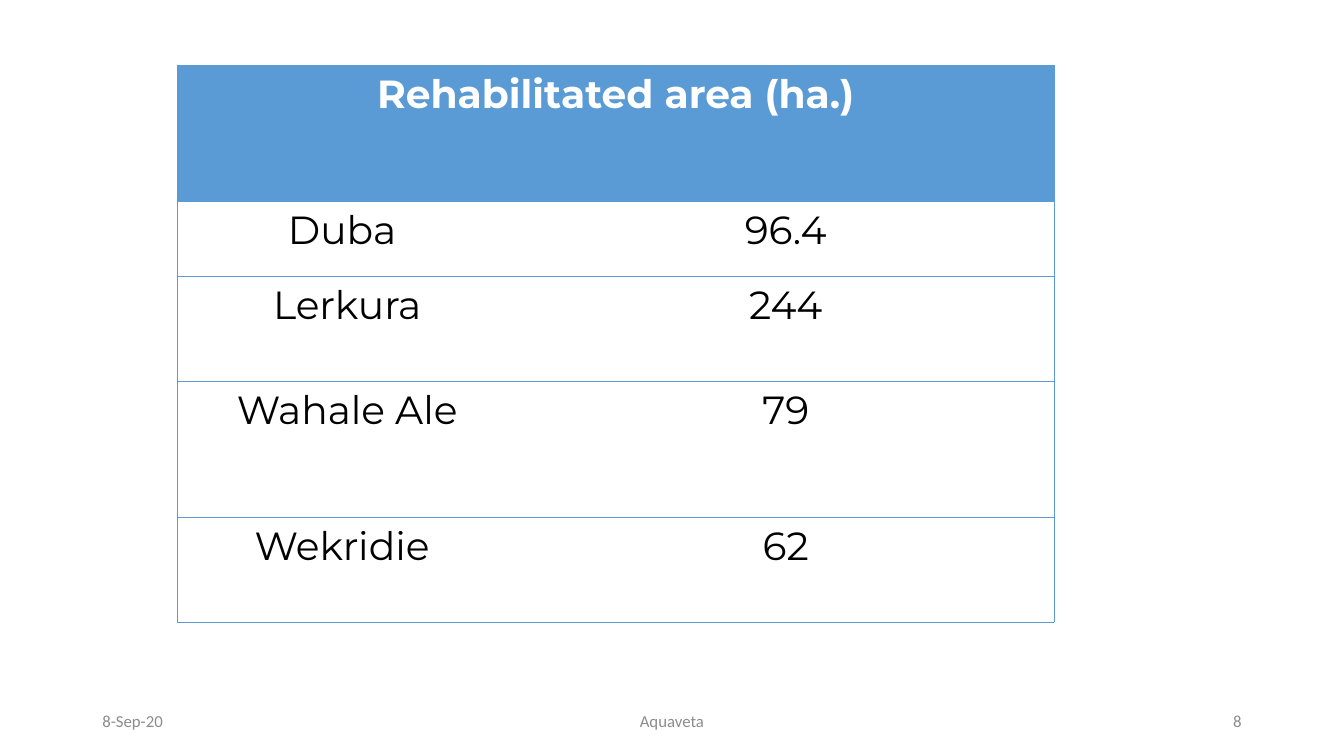
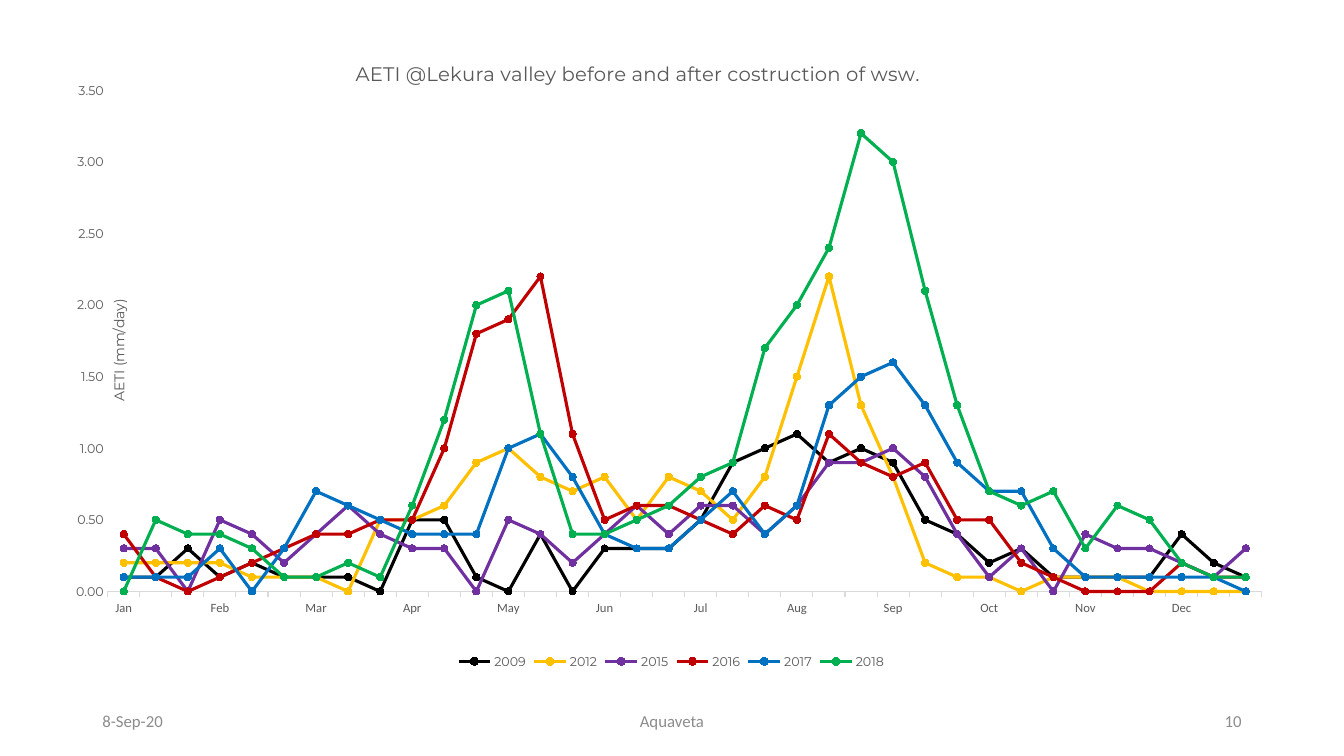
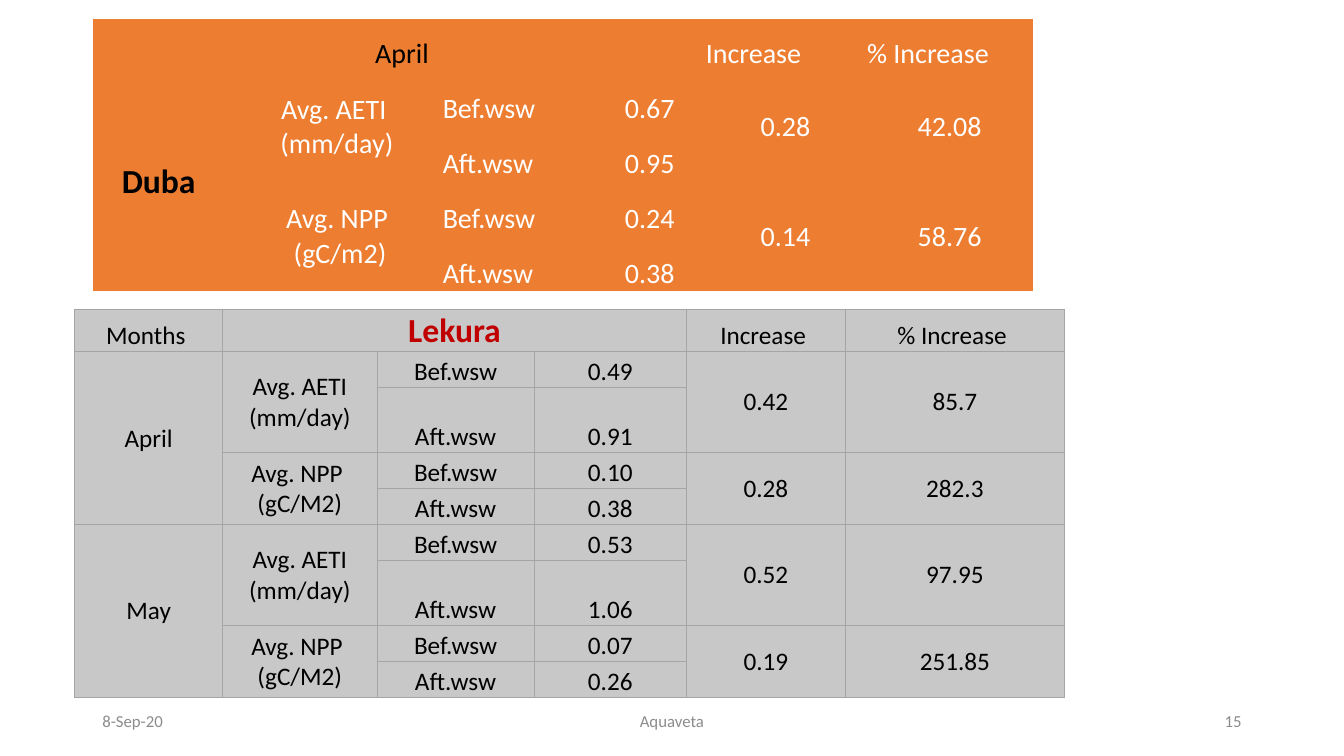
from dataclasses import dataclass
from itertools import accumulate
from typing import Optional

from lxml import etree
from pptx import Presentation
from pptx.chart.data import CategoryChartData
from pptx.dml.color import RGBColor
from pptx.enum import chart as ch, text as tx
from pptx.oxml import ns
from pptx.util import Pt

COLORS = {
    "white": "FFFFFF", "black": "000000", "footer": "8C8C8C", "label": "595959",
    "axis": "D9D9D9", "blue": "5B9BD5", "orange": "ED7D31", "gray": "C8C8C8",
    "border": "A5A5A5", "red": "C00000", "gold": "FFC000", "purple": "7030A0",
    "azure": "0070C0", "green": "00B050",
}
BODY, DISPLAY = "Calibri", "Montserrat"
LEFT, CENTER, RIGHT = tx.PP_ALIGN.LEFT, tx.PP_ALIGN.CENTER, tx.PP_ALIGN.RIGHT
TOP, MIDDLE, BOTTOM = tx.MSO_ANCHOR.TOP, tx.MSO_ANCHOR.MIDDLE, tx.MSO_ANCHOR.BOTTOM
ALL_SIDES = "LRTB"


@dataclass(frozen=True)
class Style:
    size: float
    color: str = "black"
    font: str = BODY
    bold: bool = False
    align: int = CENTER


@dataclass(frozen=True)
class Cell:
    row: int
    col: int
    lines: tuple[str, ...]
    style: Style
    anchor: int = BOTTOM
    rows: int = 1
    cols: int = 1


@dataclass(frozen=True)
class Grid:
    left: float
    top: float
    widths: tuple[float, ...]
    heights: tuple[float, ...]
    fill: Optional[str] = None
    border: Optional[str] = None
    insets: tuple[float, float] = (0.72, 0)


@dataclass(frozen=True)
class Metric:
    """Values of one quantity before and after construction."""
    lines: tuple[str, ...]
    before: str
    after: str
    increase: str
    percent: str


@dataclass(frozen=True)
class Year:
    name: str
    color: str
    values: tuple[float, ...]


def rgb(name: str) -> RGBColor:
    return RGBColor.from_string(COLORS[name])


def style_font(font, style: Style) -> None:
    font.size, font.name, font.bold = Pt(style.size), style.font, style.bold
    font.color.rgb = rgb(style.color)


def write(tf, lines: tuple[str, ...], style: Style) -> None:
    for i, line in enumerate(lines):
        p = tf.add_paragraph() if i else tf.paragraphs[0]
        p.alignment = style.align
        r = p.add_run()
        r.text = line
        style_font(r.font, style)


def add_slide(prs, number: int):
    """Add a blank slide with date, name and slide number at the bottom."""
    s = prs.slides.add_slide(prs.slide_layouts[6])
    footer = ((66, 216, "8-Sep-20", LEFT), (318, 324, "Aquaveta", CENTER),
              (678, 216, str(number), RIGHT))
    for left, width, label, align in footer:
        sp = s.shapes.add_textbox(Pt(left), Pt(500.5), Pt(width), Pt(28.75))
        tf = sp.text_frame
        tf.word_wrap, tf.vertical_anchor = True, MIDDLE
        write(tf, (label,), Style(12, "footer", align=align))
    return s


def set_borders(cell, color: Optional[str], sides: str = ALL_SIDES) -> None:
    """Draw the named sides and switch the other sides off."""
    tc_pr = cell._tc.get_or_add_tcPr()
    for i, side in enumerate(ALL_SIDES):
        ln = etree.Element(ns.qn(f"a:ln{side}"), w=str(Pt(0.5)))
        if color and side in sides:
            fill = etree.SubElement(ln, ns.qn("a:solidFill"))
            etree.SubElement(fill, ns.qn("a:srgbClr"), val=COLORS[color])
        else:
            etree.SubElement(ln, ns.qn("a:noFill"))
        tc_pr.insert(i, ln)


def add_grid(s, grid: Grid, cells: list[Cell]):
    frame = s.shapes.add_table(
        len(grid.heights), len(grid.widths), Pt(grid.left), Pt(grid.top),
        Pt(sum(grid.widths)), Pt(sum(grid.heights)))
    table = frame.table
    table.first_row = table.horz_banding = False
    for column, width in zip(table.columns, grid.widths):
        column.width = Pt(width)
    for row, height in zip(table.rows, grid.heights):
        row.height = Pt(height)
    side, top = grid.insets
    for cell in table.iter_cells():
        cell.margin_left = cell.margin_right = Pt(side)
        cell.margin_top, cell.margin_bottom = Pt(top or 0.72), Pt(top)
        if grid.fill:
            cell.fill.solid()
            cell.fill.fore_color.rgb = rgb(grid.fill)
        else:
            cell.fill.background()
        set_borders(cell, grid.border)
    for item in cells:
        cell = table.cell(item.row, item.col)
        if item.rows * item.cols > 1:
            cell.merge(table.cell(item.row + item.rows - 1, item.col + item.cols - 1))
        cell.vertical_anchor = item.anchor
        write(cell.text_frame, item.lines, item.style)
    return table


def metric_cells(row: int, m: Metric, style: Style, name_style: Style) -> list[Cell]:
    """Cells of the two rows that one metric fills, from the second column on."""
    cells = [Cell(row, col, lines, style, MIDDLE, rows=2) for col, lines in
             ((1, m.lines), (4, (m.increase,)), (5, (m.percent,)))]
    for i, (name, value) in enumerate((("Bef.wsw", m.before), ("Aft.wsw", m.after))):
        cells += [Cell(row + i, 2, (name,), name_style), Cell(row + i, 3, (value,), style)]
    return cells


def build_area_slide(prs) -> None:
    s = add_slide(prs, 8)
    head = Style(28, "white", DISPLAY, bold=True)
    body = Style(28, font=DISPLAY)
    areas = (("Duba ", "96.4"), ("Lerkura", "244"), ("Wahale Ale", "79"), ("Wekridie ", "62"))
    cells = [Cell(0, 0, ("Rehabilitated area (ha.)",), head, TOP, cols=2)]
    cells += [Cell(row, col, (label,), body, TOP)
              for row, area in enumerate(areas, 1) for col, label in enumerate(area)]
    grid = Grid(126.4, 46.9, (243.2, 383.4), (97, 53.5, 75, 97, 75), insets=(7.2, 3.6))
    table = add_grid(s, grid, cells)
    for i, cell in enumerate(table.iter_cells()):
        row, col = divmod(i, 2)
        tc_pr = cell._tc.get_or_add_tcPr()
        for ln in list(tc_pr)[:len(ALL_SIDES)]:
            tc_pr.remove(ln)
        if row == 0:
            cell.fill.solid()
            cell.fill.fore_color.rgb = rgb("blue")
        set_borders(cell, "blue", ALL_SIDES if row == 0 else ("LTB", "RTB")[col])


def place(parent, index: int, inner: bool = False, **fractions: float) -> None:
    """Give a chart part a manual layout in fractions of the chart."""
    for old in parent.findall(ns.qn("c:layout")):
        parent.remove(old)
    layout = etree.Element(ns.qn("c:layout"))
    manual = etree.SubElement(layout, ns.qn("c:manualLayout"))
    if inner:
        etree.SubElement(manual, ns.qn("c:layoutTarget"), val="inner")
    for key in "xy":
        etree.SubElement(manual, ns.qn(f"c:{key}Mode"), val="edge")
    for key, value in fractions.items():
        etree.SubElement(manual, ns.qn(f"c:{key}"), val=str(value))
    parent.insert(index, layout)


YEARS = (
    Year("2009", "black", (
        0.1, 0.1, 0.3, 0.1, 0.2, 0.1, 0.1, 0.1, 0, 0.5, 0.5, 0.1, 0, 0.4, 0, 0.3, 0.3, 0.3,
        0.5, 0.9, 1, 1.1, 0.9, 1, 0.9, 0.5, 0.4, 0.2, 0.3, 0.1, 0.1, 0.1, 0.1, 0.4, 0.2, 0.1)),
    Year("2012", "gold", (
        0.2, 0.2, 0.2, 0.2, 0.1, 0.1, 0.1, 0, 0.5, 0.5, 0.6, 0.9, 1, 0.8, 0.7, 0.8, 0.5, 0.8,
        0.7, 0.5, 0.8, 1.5, 2.2, 1.3, 0.8, 0.2, 0.1, 0.1, 0, 0.1, 0.1, 0.1, 0, 0, 0, 0)),
    Year("2015", "purple", (
        0.3, 0.3, 0, 0.5, 0.4, 0.2, 0.4, 0.6, 0.4, 0.3, 0.3, 0, 0.5, 0.4, 0.2, 0.4, 0.6, 0.4,
        0.6, 0.6, 0.4, 0.6, 0.9, 0.9, 1, 0.8, 0.4, 0.1, 0.3, 0, 0.4, 0.3, 0.3, 0.2, 0.1, 0.3)),
    Year("2016", "red", (
        0.4, 0.1, 0, 0.1, 0.2, 0.3, 0.4, 0.4, 0.5, 0.5, 1, 1.8, 1.9, 2.2, 1.1, 0.5, 0.6, 0.6,
        0.5, 0.4, 0.6, 0.5, 1.1, 0.9, 0.8, 0.9, 0.5, 0.5, 0.2, 0.1, 0, 0, 0, 0.2, 0.1, 0.1)),
    Year("2017", "azure", (
        0.1, 0.1, 0.1, 0.3, 0, 0.3, 0.7, 0.6, 0.5, 0.4, 0.4, 0.4, 1, 1.1, 0.8, 0.4, 0.3, 0.3,
        0.5, 0.7, 0.4, 0.6, 1.3, 1.5, 1.6, 1.3, 0.9, 0.7, 0.7, 0.3, 0.1, 0.1, 0.1, 0.1, 0.1, 0)),
    Year("2018", "green", (
        0, 0.5, 0.4, 0.4, 0.3, 0.1, 0.1, 0.2, 0.1, 0.6, 1.2, 2, 2.1, 1.1, 0.4, 0.4, 0.5, 0.6,
        0.8, 0.9, 1.7, 2, 2.4, 3.2, 3, 2.1, 1.3, 0.7, 0.6, 0.7, 0.3, 0.6, 0.5, 0.2, 0.1, 0.1)),
)


def build_chart_slide(prs) -> None:
    s = add_slide(prs, 10)
    data = CategoryChartData(number_format="0.00")
    months = "Jan Feb Mar Apr May Jun Jul Aug Sep Oct Nov Dec".split()
    data.categories = [label for month in months for label in (month, "", "")]
    for year in YEARS:
        data.add_series(year.name, year.values)
    chart = s.shapes.add_chart(ch.XL_CHART_TYPE.LINE_MARKERS, Pt(41), Pt(17.3),
                               Pt(877), Pt(463.7), data).chart
    style_font(chart.font, Style(10))
    label = Style(9, "label", DISPLAY)

    chart.has_title = True
    write(chart.chart_title.text_frame,
          ("AETI @Lekura valley before and after costruction of wsw.",),
          Style(14, "label", DISPLAY))
    place(chart.chart_title._element, 1, x=0.24, y=0.05)

    chart.has_legend = True
    chart.legend.position = ch.XL_LEGEND_POSITION.BOTTOM
    chart.legend.include_in_layout = False
    style_font(chart.legend.font, label)

    months_axis, aeti_axis = chart.category_axis, chart.value_axis
    months_axis.major_tick_mark = ch.XL_TICK_MARK.OUTSIDE
    months_axis.format.line.color.rgb = rgb("axis")
    months_axis.format.line.width = Pt(0.75)
    style_font(months_axis.tick_labels.font, Style(9, "label"))

    aeti_axis.minimum_scale, aeti_axis.maximum_scale, aeti_axis.major_unit = 0, 3.5, 0.5
    aeti_axis.has_major_gridlines = False
    aeti_axis.major_tick_mark = ch.XL_TICK_MARK.NONE
    aeti_axis.format.line.fill.background()
    aeti_axis.tick_labels.number_format = "0.00"
    aeti_axis.tick_labels.number_format_is_linked = False
    style_font(aeti_axis.tick_labels.font, label)
    tf = aeti_axis.axis_title.text_frame
    write(tf, ("AETI (mm/day)",), Style(10, "label", DISPLAY))
    tf._txBody.find(ns.qn("a:bodyPr")).set("rot", "-5400000")
    place(aeti_axis.axis_title._element, 1, x=0.04, y=0.42)

    plot = chart.plots[0]
    plot.vary_by_categories = False
    place(plot._element.getparent(), 0, inner=True, x=0.041, y=0.102, w=0.94, h=0.772)
    for series, year in zip(plot.series, YEARS):
        color = rgb(year.color)
        series.smooth = False
        series.format.line.color.rgb = color
        series.format.line.width = Pt(2.25)
        marker = series.marker
        marker.style, marker.size = ch.XL_MARKER_STYLE.CIRCLE, 5
        marker.format.fill.solid()
        marker.format.fill.fore_color.rgb = color
        marker.format.line.color.rgb = color


def add_duba_table(s) -> None:
    value = Style(20, "white")
    name = Style(20, "white", align=LEFT)
    metrics = (
        Metric(("Avg. AETI ", "(mm/day)"), "0.67", "0.95", "0.28", "42.08"),
        Metric(("Avg. NPP", " (gC/m2)"), "0.24", "0.38", "0.14", "58.76"),
    )
    cells = [
        Cell(0, 0, (" April",), Style(20), cols=4),
        Cell(0, 4, ("Increase",), name),
        Cell(0, 5, ("% Increase",), name),
        Cell(1, 0, ("Duba ",), Style(24, bold=True), MIDDLE, rows=4),
    ]
    for i, metric in enumerate(metrics):
        cells += metric_cells(1 + 2 * i, metric, value, name)
    add_grid(s, Grid(66.4, 13.7, (99.4, 149.8, 109.4, 78.5, 115.2, 119.5),
                     (37.4,) + (39.2,) * 4, fill="orange"), cells)


def add_lekura_table(s) -> None:
    body = Style(18)
    aeti, npp = ("Avg. AETI (mm/day)",), ("Avg. NPP ", "(gC/M2)")
    months = {
        "April": (Metric(aeti, "0.49", "0.91", "0.42", "85.7"),
                  Metric(npp, "0.10", "0.38", "0.28", "282.3")),
        "May": (Metric(aeti, "0.53", "1.06", "0.52", "97.95"),
                Metric(npp, "0.07", "0.26", "0.19", "251.85")),
    }
    cells = [
        Cell(0, 0, ("Months ",), body),
        Cell(0, 1, ("Lekura",), Style(24, "red", bold=True), cols=3),
        Cell(0, 4, ("Increase ",), body),
        Cell(0, 5, ("% Increase ",), body),
    ]
    starts = accumulate((2 * len(metrics) for metrics in months.values()), initial=1)
    for start, (month, metrics) in zip(starts, months.items()):
        cells.append(Cell(start, 0, (month,), body, MIDDLE, rows=2 * len(metrics)))
        for i, metric in enumerate(metrics):
            cells += metric_cells(start + 2 * i, metric, body, body)
    add_grid(s, Grid(53.3, 221, (105.8, 110.2, 112.3, 108.7, 113.8, 156.2),
                     (30,) + (25.8, 46.2, 25.8, 25.8) * 2,
                     fill="gray", border="border"), cells)


def build_comparison_slide(prs) -> None:
    s = add_slide(prs, 15)
    add_duba_table(s)
    add_lekura_table(s)


def main() -> None:
    prs = Presentation()
    prs.slide_width, prs.slide_height = Pt(960), Pt(540)
    build_area_slide(prs)
    build_chart_slide(prs)
    build_comparison_slide(prs)
    prs.save("out.pptx")


if __name__ == "__main__":
    main()
